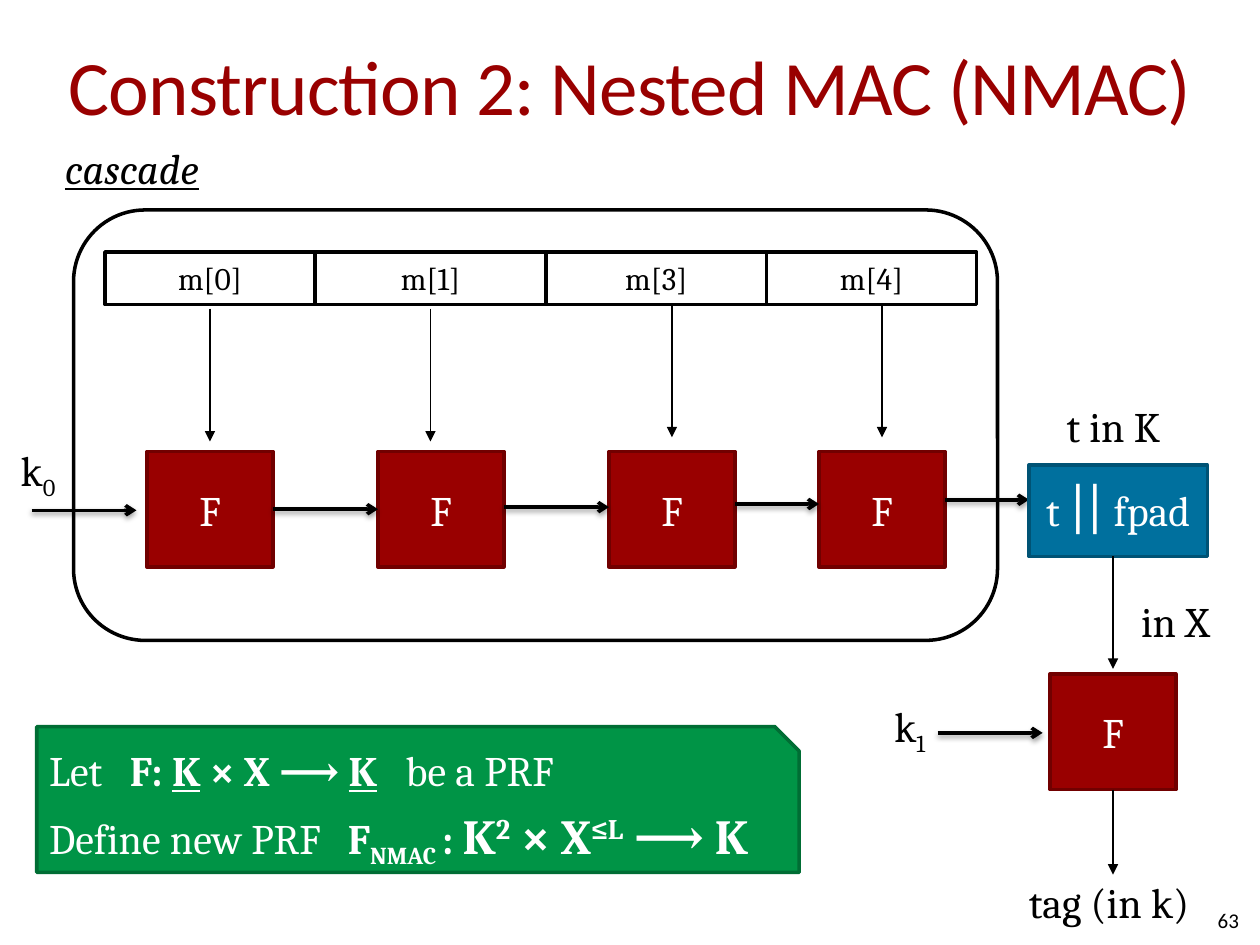
from lxml import etree
from pptx import Presentation
from pptx import util as u
from pptx.dml.color import RGBColor
from pptx.enum import shapes, text
from pptx.oxml.ns import qn

COLORS = {
    "black": "000000", "white": "FFFFFF",
    "red": "990000", "dark red": "710000",
    "blue": "00709E", "dark blue": "005375",
    "green": "009446", "dark green": "006D34",
}
WIDTH, HEIGHT = u.Inches(10), u.Inches(7.5)
COLUMNS, ROWS = 120, 90
LEFT, CENTER, RIGHT = text.PP_ALIGN.LEFT, text.PP_ALIGN.CENTER, text.PP_ALIGN.RIGHT
RECTANGLE = shapes.MSO_SHAPE.RECTANGLE


def color(name):
    """Look up a colour of the deck."""
    return RGBColor.from_string(COLORS[name])


def across(columns):
    """Turn grid columns into a length."""
    return round(WIDTH * columns / COLUMNS)


def down(rows):
    """Turn grid rows into a length."""
    return round(HEIGHT * rows / ROWS)


def within(box, left, top, width, height):
    """Place a part relative to the corner of its box."""
    return box[0] + left, box[1] + top, width, height


def measure(box):
    """Turn a grid box into left, top, width and height."""
    left, top, width, height = box
    return across(left), down(top), across(width), down(height)


def write(para, words, ink="black", size=24, font="Cambria", bold=None,
          italic=None, underline=None, baseline=None):
    """Add one formatted run to a paragraph."""
    span = para.add_run()
    span.text = words
    span.font.name, span.font.size = font, u.Pt(size)
    span.font.bold, span.font.italic, span.font.underline = bold, italic, underline
    span.font.color.rgb = color(ink)
    if baseline:
        span.font._element.set("baseline", str(baseline * 1000))
    return span


def block(page, box, fill, edge, kind=RECTANGLE):
    """Add a filled and outlined shape."""
    shape = page.shapes.add_shape(kind, *measure(box))
    shape.shadow.inherit = False
    shape.fill.solid()
    shape.fill.fore_color.rgb = color(fill)
    shape.line.color.rgb = color(edge)
    shape.line.width = u.Pt(2)
    shape.text_frame.word_wrap = False
    shape.text_frame.paragraphs[0].alignment = CENTER
    return shape


def function_block(page, box):
    """Add a red block for the function F."""
    shape = block(page, box, "red", "dark red")
    write(shape.text_frame.paragraphs[0], "F", "white")
    return shape


def label(page, box, words, subscript=None, **style):
    """Add free text with an optional subscript."""
    shape = page.shapes.add_textbox(*measure(box))
    shape.text_frame.word_wrap = False
    shape.text_frame.auto_size = text.MSO_AUTO_SIZE.SHAPE_TO_FIT_TEXT
    para = shape.text_frame.paragraphs[0]
    write(para, words, **style)
    if subscript:
        write(para, subscript, baseline=-25)
    return shape


def arrow(page, start, end, heavy=False):
    """Draw a thin arrow, or a heavy one with a soft shadow."""
    line = page.shapes.add_connector(
        shapes.MSO_CONNECTOR.STRAIGHT,
        across(start[0]), down(start[1]), across(end[0]), down(end[1]))
    line.line.color.rgb = color("black")
    line.line.width = u.Pt(2 if heavy else 0.75)
    properties = line._element.spPr
    etree.SubElement(properties.find(qn("a:ln")), qn("a:tailEnd"),
                     type="arrow" if heavy else "triangle")
    effects = etree.SubElement(properties, qn("a:effectLst"))
    if heavy:
        shadow = etree.SubElement(effects, qn("a:outerShdw"), blurRad=str(u.Pt(3.1)),
                                  dist=str(u.Pt(1.6)), dir="5400000", rotWithShape="0")
        ink = etree.SubElement(shadow, qn("a:srgbClr"), val=COLORS["black"])
        etree.SubElement(ink, qn("a:alpha"), val="38000")
    return line


def add_title(page, box):
    """Format the title placeholder."""
    title = page.shapes.title
    title.left, title.top, title.width, title.height = measure(box)
    frame = title.text_frame
    frame.margin_left = frame.margin_right = 0
    frame.vertical_anchor = text.MSO_ANCHOR.MIDDLE
    frame.auto_size = text.MSO_AUTO_SIZE.NONE
    frame.paragraphs[0].alignment = CENTER
    span = write(frame.paragraphs[0], "Construction 2: Nested MAC (NMAC)", "red", 44, "Calibri")
    span.font._element.set("spc", "-50")


def add_cascade(page, box):
    """Build the chain of F blocks fed by the message parts."""
    block(page, box, "white", "black", shapes.MSO_SHAPE.ROUNDED_RECTANGLE)
    label(page, within(box, -2, -7, 16.7, 6), "cascade", italic=True, underline=True)

    left = 3
    for words, width in (("m[0]", 20), ("m[1]", 22), ("m[3]", 21), ("m[4]", 20)):
        part = block(page, within(box, left, 4, width, 5), "white", "black")
        write(part.text_frame.paragraphs[0], words, size=18)
        left += width

    starts, side = (7, 29, 51, 71), 12
    blocks = [function_block(page, within(box, start, 23, side, 11)) for start in starts]

    for column, row in ((13, 9.4), (34, 9.4), (57, 9), (77, 9)):
        top = within(box, column, row, 0, 0)
        arrow(page, top, (top[0], top[1] + 12.65))

    links = []
    for start, end, row in zip(starts, starts[1:] + (91,), (28.5, 28.3, 28, 27.6)):
        links.append(arrow(page, within(box, start + side, row, 0, 0),
                           within(box, end, row, 0, 0), heavy=True))
    links[0].begin_connect(blocks[0], 3)
    links[0].end_connect(blocks[1], 1)

    arrow(page, within(box, -4, 28.6, 0, 0), within(box, 6, 28.6, 0, 0), heavy=True)
    label(page, within(box, -6.2, 21.7, 6, 6), "k", "0")


def add_outer(page, box):
    """Build the padding block, the final F and the tag."""
    pad = block(page, within(box, 14, 6.7, 17, 8.7), "blue", "dark blue")
    pad.text_frame.word_wrap = True
    pad.text_frame.margin_bottom = u.Inches(0.15)
    for words, size in (("t ", 24), ("||", 32), (" fpad", 24)):
        write(pad.text_frame.paragraphs[0], words, "white", size)

    final = function_block(page, within(box, 16, 26.6, 12, 11))
    arrow(page, within(box, 22, 15.4, 0, 0), within(box, 22, 26.1, 0, 0))
    tag = arrow(page, within(box, 22, 37.6, 0, 0), within(box, 22, 45.7, 0, 0))
    tag.begin_connect(final, 2)
    arrow(page, within(box, 5.3, 32.2, 0, 0), within(box, 15.3, 32.2, 0, 0), heavy=True)

    label(page, within(box, 0, 28.5, 6, 6), "k", "1")
    label(page, within(box, 16.4, 0, 12.1, 6), "t in K")
    label(page, within(box, 23.5, 18.5, 9, 6), "in X")
    label(page, within(box, 12.8, 45.3, 18.1, 6), "tag (in k)")


def add_definition(page, box):
    """Build the green panel that defines the PRF."""
    panel = block(page, box, "green", "dark green", shapes.MSO_SHAPE.SNIP_1_RECTANGLE)
    frame = panel.text_frame
    frame.vertical_anchor = text.MSO_ANCHOR.TOP
    bold, big = {"bold": True}, {"bold": True, "size": 28}
    key = {"bold": True, "underline": True}
    power = {**big, "baseline": 30}
    lines = (
        (4.8, (0.64, 2.83), (
            ("Let\t", {}), ("F: ", bold), ("K", key), (" × X ⟶ ", bold),
            ("K", key), ("\tbe a PRF", {}))),
        (5.6, (2.37,), (
            ("Define new PRF\t", {}), ("F", bold), ("NMAC ", {**bold, "baseline": -25}),
            (": ", bold), ("K", big), ("2", power), (" × X", big),
            ("≤L", power), (" ⟶ K", big))),
    )
    paras = (frame.paragraphs[0], frame.add_paragraph())
    for para, (space, stops, spans) in zip(paras, lines):
        para.alignment = LEFT
        para.space_before = u.Pt(space)
        tabs = etree.SubElement(para._p.get_or_add_pPr(), qn("a:tabLst"))
        for stop in stops:
            etree.SubElement(tabs, qn("a:tab"), pos=str(u.Inches(stop)), algn="l")
        for words, style in spans:
            write(para, words, "white", **style)


def add_number(page, box):
    """Add the page number."""
    frame = label(page, box, "63", size=12, font="Calibri").text_frame
    frame.auto_size = text.MSO_AUTO_SIZE.NONE
    frame.word_wrap = True
    frame.margin_left = frame.margin_right = frame.margin_top = frame.margin_bottom = 0
    frame.vertical_anchor = text.MSO_ANCHOR.MIDDLE
    frame.paragraphs[0].alignment = RIGHT


def main():
    """Build the deck."""
    deck = Presentation()
    deck.slide_width, deck.slide_height = WIDTH, HEIGHT
    page = deck.slides.add_slide(deck.slide_layouts[5])
    add_title(page, (6, 2.6, 108, 11))
    add_cascade(page, (7, 20, 88, 41))
    add_outer(page, (84, 37.6, 33, 52))
    add_definition(page, (3.5, 69.2, 72.6, 13.9))
    add_number(page, (90, 85.2, 28, 4.8))
    deck.save("out.pptx")


if __name__ == "__main__":
    main()
